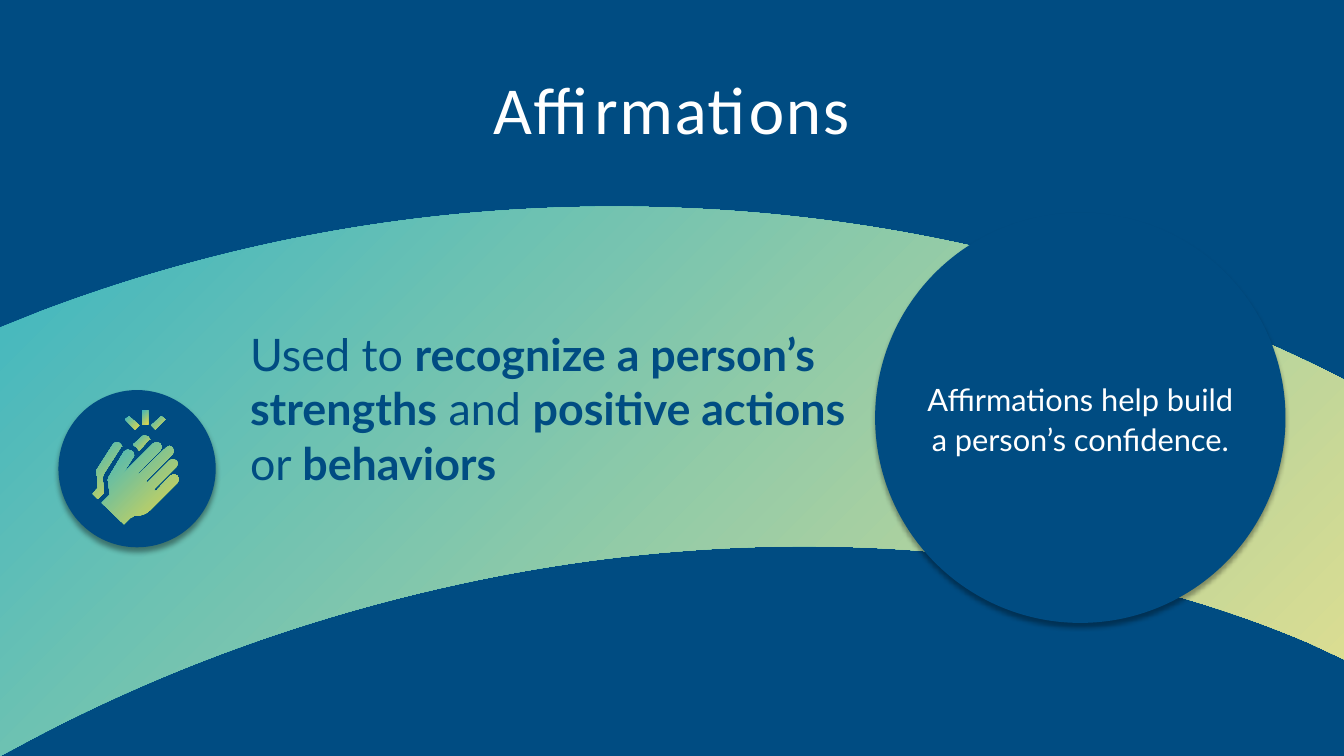
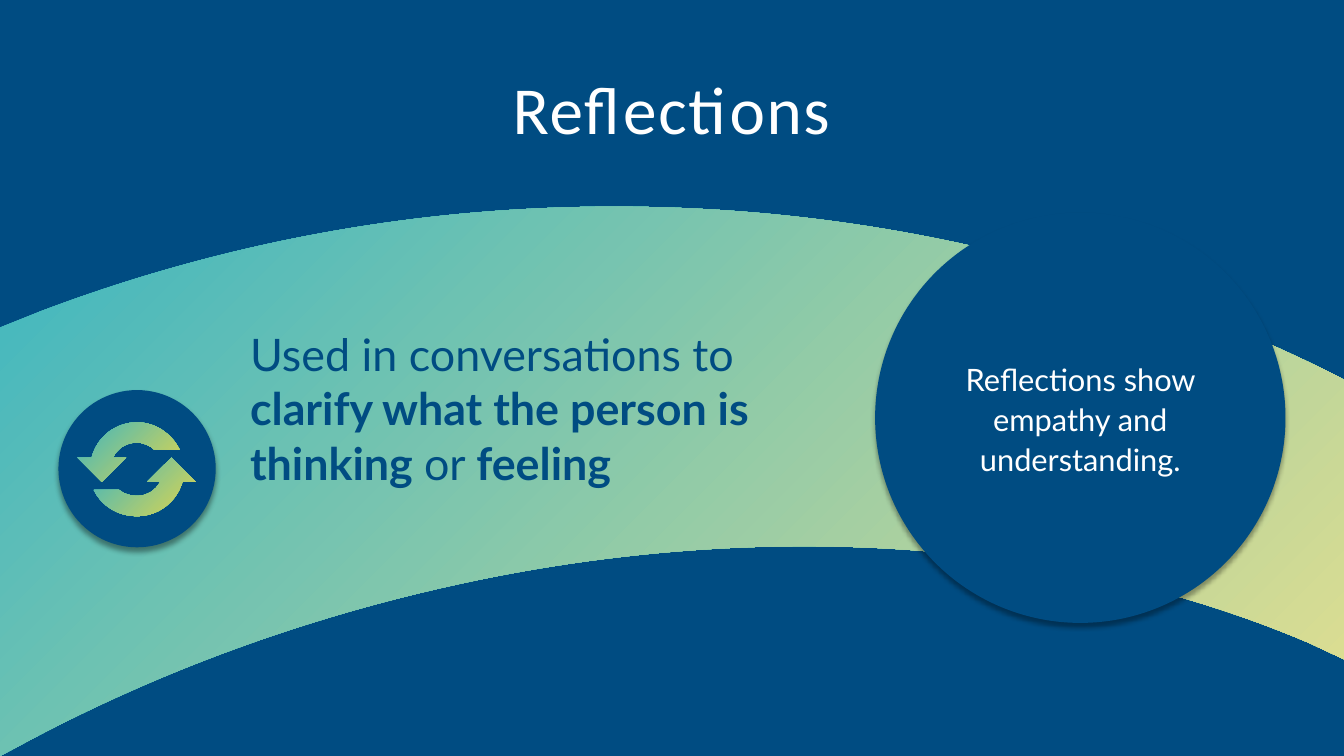
from lxml import etree
from pptx import Presentation
from pptx.dml.color import RGBColor
from pptx.enum.shapes import MSO_SHAPE
from pptx.enum.text import MSO_ANCHOR, MSO_AUTO_SIZE, PP_ALIGN
from pptx.oxml.ns import qn
from pptx.util import Inches, Pt

OVAL = MSO_SHAPE.OVAL
BOTTOM, MIDDLE = MSO_ANCHOR.BOTTOM, MSO_ANCHOR.MIDDLE
LEFT, CENTER = PP_ALIGN.LEFT, PP_ALIGN.CENTER
NO_AUTOFIT = MSO_AUTO_SIZE.NONE

NAVY, WHITE = "004C82", "FFFFFF"
BAND_GRADIENT = ("45C2C8", "FCEF91")
ICON_GRADIENT = ("45C2C8", "FAE548")
GRADIENT_OPACITY = 90

TITLE_BOX = (1.16, 0.52, 11, 1)
STATEMENT_BOX = (2.38, 2.66, 6.13, 2.77)
TAKEAWAY_BOX = (9.05, 2.89, 3.33, 2.51)
ICON_CIRCLE = (0.58, 3.87, 1.56, 1.56)
TAKEAWAY_CIRCLE = (8.68, 2.11, 4.07, 4.07)

BAND = [
    (6.09, 2.05), (8.67, 2.05, 11.11, 2.65, 13.28, 3.74), (13.33, 3.77), (13.33, 6.54),
    (12.99, 6.38), (10.86, 5.47, 8.17, 5.16, 5.29, 5.65), (3.44, 5.97, 1.7, 6.58, 0.17, 7.41),
    (0, 7.5), (0, 3.25), (0.4, 3.09), (2.17, 2.42, 4.09, 2.05, 6.09, 2.05),
]
BACK_FINGER = [
    (1.33, 4.42), (1.35, 4.43, 1.37, 4.45, 1.38, 4.47), (1.48, 4.36), (1.49, 4.36),
    (1.48, 4.33, 1.46, 4.32, 1.43, 4.32), (1.42, 4.32, 1.41, 4.33, 1.41, 4.33), (1.32, 4.41),
    (1.33, 4.42, 1.33, 4.42, 1.33, 4.42),
]
BACK_HAND = [
    (0.97, 4.95), (0.99, 4.93), (1.03, 4.89), (1.02, 4.77),
    (1.01, 4.75, 1.02, 4.72, 1.03, 4.7), (1.19, 4.45), (1.19, 4.44, 1.2, 4.43, 1.21, 4.43),
    (1.2, 4.4, 1.17, 4.38, 1.15, 4.39), (1.14, 4.39, 1.12, 4.4, 1.12, 4.41), (0.96, 4.66),
    (0.96, 4.67, 0.95, 4.68, 0.96, 4.69), (0.97, 4.84), (0.92, 4.9),
]
FRONT_HAND = [
    (1.76, 4.72), (1.74, 4.7, 1.71, 4.7, 1.69, 4.72), (1.55, 4.87),
    (1.54, 4.87, 1.54, 4.87, 1.53, 4.87), (1.53, 4.86, 1.53, 4.86, 1.53, 4.85), (1.75, 4.63),
    (1.77, 4.61, 1.77, 4.58, 1.75, 4.57), (1.73, 4.55, 1.7, 4.55, 1.68, 4.57), (1.46, 4.79),
    (1.46, 4.79, 1.45, 4.79, 1.45, 4.78), (1.45, 4.78, 1.45, 4.77, 1.45, 4.77), (1.71, 4.51),
    (1.73, 4.49, 1.73, 4.46, 1.71, 4.44), (1.7, 4.42, 1.67, 4.42, 1.65, 4.44), (1.38, 4.7),
    (1.38, 4.71, 1.37, 4.71, 1.37, 4.7), (1.36, 4.7, 1.36, 4.69, 1.37, 4.69), (1.59, 4.47),
    (1.61, 4.45, 1.61, 4.42, 1.59, 4.4), (1.57, 4.38, 1.54, 4.38, 1.52, 4.4), (1.3, 4.62),
    (1.21, 4.71), (1.32, 4.54), (1.34, 4.51, 1.33, 4.48, 1.3, 4.47),
    (1.28, 4.45, 1.25, 4.46, 1.23, 4.48), (1.08, 4.73), (1.07, 4.74, 1.07, 4.75, 1.07, 4.76),
    (1.09, 4.91), (1.01, 4.99), (1.23, 5.2), (1.29, 5.14),
    (1.34, 5.09, 1.4, 5.15, 1.5, 5.05), (1.76, 4.79), (1.78, 4.77, 1.78, 4.74, 1.76, 4.72),
]
CLAP_RAYS = [
    [(1.41, 4.07), (1.47, 4.07), (1.47, 4.21), (1.41, 4.21)],
    [(1.5, 4.22), (1.6, 4.13), (1.64, 4.16), (1.54, 4.26)],
    [(1.24, 4.16), (1.28, 4.13), (1.38, 4.22), (1.34, 4.26)],
]
UPPER_ARROW = [
    (1.01, 4.78), (1.25, 4.54), (1.12, 4.54), (1.16, 4.45, 1.25, 4.39, 1.36, 4.39),
    (1.42, 4.39, 1.49, 4.42, 1.53, 4.46), (1.78, 4.46), (1.7, 4.3, 1.54, 4.19, 1.36, 4.19),
    (1.14, 4.19, 0.96, 4.34, 0.91, 4.54), (0.77, 4.54),
]
LOWER_ARROW = [
    (1.94, 4.78), (1.7, 4.54), (1.46, 4.78), (1.59, 4.78),
    (1.55, 4.86, 1.46, 4.92, 1.36, 4.92), (1.29, 4.92, 1.23, 4.9, 1.18, 4.86), (0.93, 4.86),
    (1.01, 5.02, 1.17, 5.12, 1.36, 5.12), (1.57, 5.12, 1.75, 4.98, 1.81, 4.78),
]

SLIDES = [
    {
        "title": "Affirmations",
        "statement": [("Used to ", False), ("recognize a person’s strengths", True),
                      (" and ", False), ("positive actions ", True),
                      ("or ", False), ("behaviors", True)],
        "takeaway": "Affirmations help build a person’s confidence.",
        "icon": [BACK_FINGER, BACK_HAND, FRONT_HAND, *CLAP_RAYS],
    },
    {
        "title": "Reflections",
        "statement": [("Used in conversations to ", False),
                      ("clarify what the person is thinking ", True),
                      ("or ", False), ("feeling", True)],
        "takeaway": "Reflections show empathy and understanding.",
        "icon": [UPPER_ARROW, LOWER_ARROW],
    },
]


def color(hex_string):
    return RGBColor.from_string(hex_string)


def inches(values):
    return [Inches(value) for value in values]


def place(shape, box):
    shape.left, shape.top, shape.width, shape.height = inches(box)


def add_alpha(color_element, percent):
    etree.SubElement(color_element, qn("a:alpha"), val=str(percent * 1000))


def write_text(shape, text, *, size, font, fill, align=LEFT, anchor=MIDDLE,
               line_spacing=None, letter_spacing=None):
    frame = shape.text_frame
    frame.word_wrap = True
    frame.auto_size = NO_AUTOFIT
    frame.vertical_anchor = anchor
    paragraph = frame.paragraphs[0]
    paragraph.alignment = align
    paragraph.space_before = Pt(0)
    if line_spacing:
        paragraph.line_spacing = line_spacing
    for words, bold in [(text, False)] if isinstance(text, str) else text:
        run = paragraph.add_run()
        run.text = words
        run.font.name, run.font.size, run.font.bold = font, Pt(size), bold
        run.font.color.rgb = color(fill)
        if letter_spacing:
            run.font._element.set("spc", str(round(letter_spacing * 100)))


def bend_segments(shape, segments):
    lines = list(shape._element.spPr.iter(qn("a:lnTo")))
    for line, segment in zip(lines, segments):
        if len(segment) == 2:
            continue
        curve = etree.Element(qn("a:cubicBezTo"))
        for x, y in (segment[:2], segment[2:4]):
            etree.SubElement(curve, qn("a:pt"), x=str(Inches(x) - shape.left),
                             y=str(Inches(y) - shape.top))
        curve.append(line[0])
        line.getparent().replace(line, curve)


def add_outline(slide, outline, gradient):
    start, *segments = outline
    builder = slide.shapes.build_freeform(*inches(start))
    builder.add_line_segments([inches(segment[-2:]) for segment in segments], close=True)
    shape = builder.convert_to_shape()
    bend_segments(shape, segments)
    shape.shadow.inherit = False
    shape.line.fill.background()
    shape.fill.gradient()
    shape.fill.gradient_angle = 315
    for stop, hex_string in zip(shape.fill.gradient_stops, gradient):
        stop.color.rgb = color(hex_string)
    for color_element in shape._element.spPr.iter(qn("a:srgbClr")):
        add_alpha(color_element, GRADIENT_OPACITY)
    return shape


def add_circle(slide, box, *, blur, opacity):
    circle = slide.shapes.add_shape(OVAL, *inches(box))
    circle.fill.solid()
    circle.fill.fore_color.rgb = color(NAVY)
    circle.line.fill.background()
    circle.shadow.inherit = False
    effects = circle._element.spPr.find(qn("a:effectLst"))
    shadow = etree.SubElement(effects, qn("a:outerShdw"), blurRad=str(Pt(blur)),
                              dist=str(Pt(3)), dir="5400000", algn="t", rotWithShape="0")
    add_alpha(etree.SubElement(shadow, qn("a:srgbClr"), val="000000"), opacity)
    return circle


def add_technique_slide(presentation, content):
    slide = presentation.slides.add_slide(presentation.slide_layouts[0])
    title, statement = slide.placeholders
    band = add_outline(slide, BAND, BAND_GRADIENT)
    title._element.addprevious(band._element)

    place(title, TITLE_BOX)
    write_text(title, content["title"], size=48, font="Calibri", fill=WHITE,
               align=CENTER, anchor=BOTTOM, letter_spacing=1.2)
    icon_circle = add_circle(slide, ICON_CIRCLE, blur=4, opacity=40)
    statement._element.addprevious(icon_circle._element)
    place(statement, STATEMENT_BOX)
    write_text(statement, content["statement"], size=32, font="Lato", fill=NAVY,
               line_spacing=1.01)

    add_circle(slide, TAKEAWAY_CIRCLE, blur=3, opacity=35)
    takeaway = slide.shapes.add_textbox(*inches(TAKEAWAY_BOX))
    write_text(takeaway, content["takeaway"], size=22, font="Lato", fill=WHITE,
               align=CENTER, line_spacing=1.08)

    slide.shapes.add_group_shape([add_outline(slide, outline, ICON_GRADIENT)
                                  for outline in content["icon"]])


def main():
    presentation = Presentation()
    presentation.slide_width, presentation.slide_height = inches((13.33, 7.5))
    background = presentation.slide_master.background.fill
    background.solid()
    background.fore_color.rgb = color(NAVY)
    for content in SLIDES:
        add_technique_slide(presentation, content)
    presentation.save("out.pptx")


if __name__ == "__main__":
    main()
